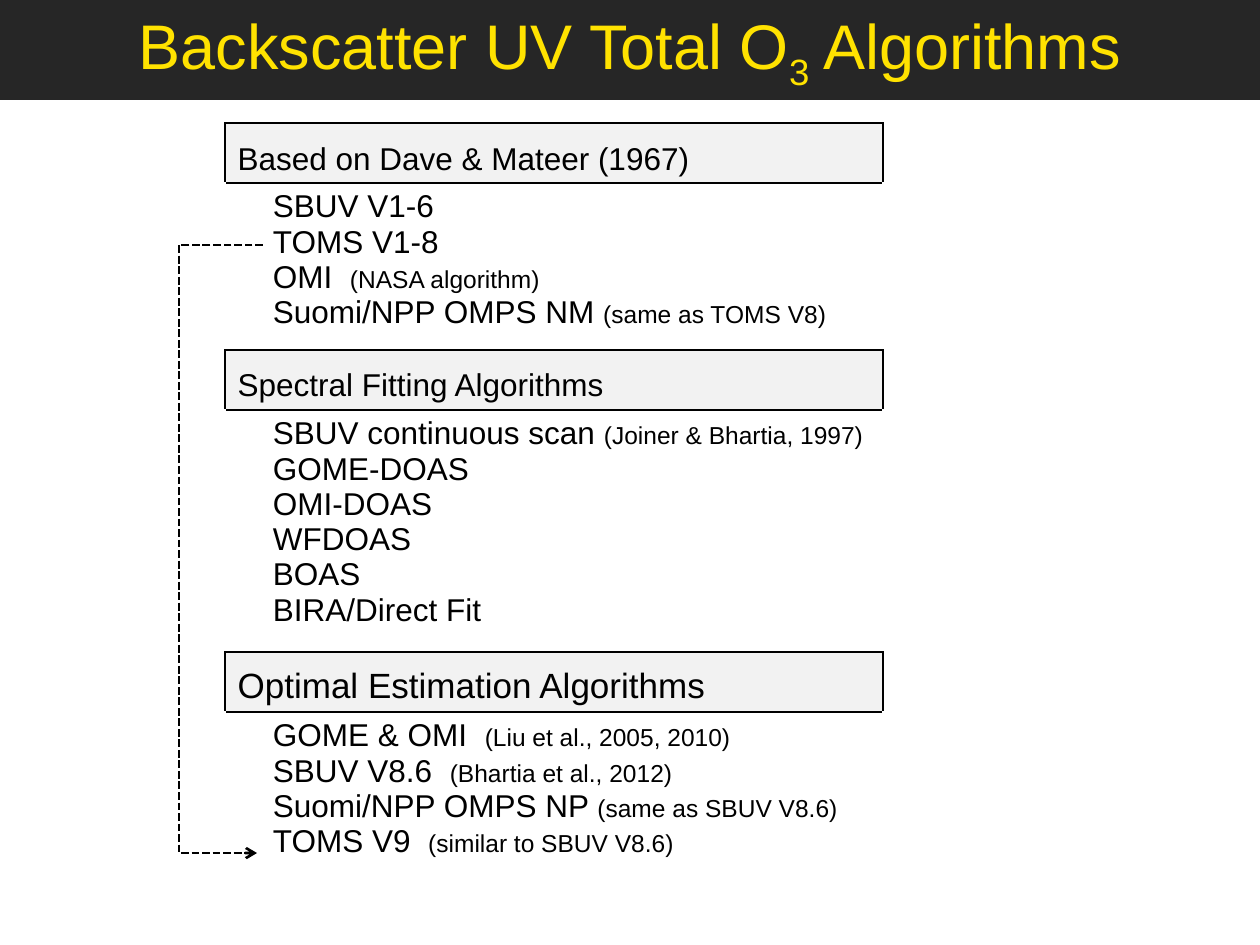
from pptx import Presentation
from pptx import util as u
from pptx.dml.color import RGBColor
from pptx.enum import dml, shapes, text
from pptx.oxml.ns import qn
from lxml import etree

BLACK, YELLOW, CHARCOAL, PALE = "000000", "FFE200", "262626", "F2F2F2"


def px(n):
    return u.Emu(round(n * 914400 / 126))


def rgb(value):
    return RGBColor.from_string(value)


class Deck:
    font = "Arial"
    note_size = 14

    def __init__(self, width, height):
        self.prs = Presentation()
        self.prs.slide_width, self.prs.slide_height = px(width), px(height)
        self.slide = self.prs.slides.add_slide(self.prs.slide_layouts[5])

    def run(self, paragraph, words, size, color=BLACK):
        run = paragraph.add_run()
        run.text = words
        run.font.name = self.font
        run.font.size = u.Pt(size)
        run.font.bold = False
        run.font.color.rgb = rgb(color)
        return run

    def title(self, before, subscript, after, width, height):
        banner = self.slide.shapes.title
        banner.left, banner.top = px(0), px(0)
        banner.width, banner.height = px(width), px(height)
        banner.fill.solid()
        banner.fill.fore_color.rgb = rgb(CHARCOAL)
        frame = banner.text_frame
        frame.auto_size = text.MSO_AUTO_SIZE.NONE
        frame.vertical_anchor = text.MSO_ANCHOR.MIDDLE
        line = frame.paragraphs[0]
        line.alignment = text.PP_ALIGN.CENTER
        self.run(line, before, 36, YELLOW)
        lowered = self.run(line, subscript, 36, YELLOW)
        lowered.font._element.set("baseline", "-25000")
        self.run(line, after, 36, YELLOW)

    def border(self, cell, sides):
        properties = cell._tc.get_or_add_tcPr()
        for side in sides:
            edge = etree.SubElement(properties, qn(f"a:ln{side}"), w=str(u.Pt(1)))
            fill = etree.SubElement(edge, qn("a:solidFill"))
            etree.SubElement(fill, qn("a:srgbClr"), val=BLACK)

    def section(self, heading, heading_size, entries, top, body_height):
        """A boxed heading row above an open row of (name, note) entries."""
        left, width, heading_height = 225, 658, 60
        table = self.slide.shapes.add_table(
            2, 1, px(left), px(top), px(width), px(heading_height + body_height)).table
        table.first_row = table.horz_banding = False
        table.rows[0].height, table.rows[1].height = px(heading_height), px(body_height)

        head, body = table.cell(0, 0), table.cell(1, 0)
        self.border(head, "LRTB")
        head.fill.solid()
        head.fill.fore_color.rgb = rgb(PALE)
        head.vertical_anchor = text.MSO_ANCHOR.BOTTOM
        self.run(head.text_frame.paragraphs[0], heading, heading_size)

        self.border(body, "T")
        body.fill.background()
        body.margin_left = px(48)
        body.margin_right = px(0)
        frame = body.text_frame
        for i, (name, note) in enumerate(entries):
            line = frame.add_paragraph() if i else frame.paragraphs[0]
            self.run(line, name, 18)
            if note:
                self.run(line, note, self.note_size)

    def dashed_elbow(self, start, end, bend_x):
        """An arrow that runs out to bend_x and back in to its end."""
        link = self.slide.shapes.add_connector(
            shapes.MSO_CONNECTOR.ELBOW, px(start[0]), px(start[1]), px(end[0]), px(end[1]))
        link.line.color.rgb = rgb(BLACK)
        link.line.width = u.Pt(1.5)
        link.line.dash_style = dml.MSO_LINE.SQUARE_DOT
        properties = link._element.spPr
        etree.SubElement(properties.find(qn("a:ln")), qn("a:tailEnd"), type="arrow")
        etree.SubElement(properties, qn("a:effectLst"))
        bend = round(100000 * (bend_x - start[0]) / (end[0] - start[0]))
        guides = properties.find(qn("a:prstGeom")).get_or_add_avLst()
        etree.SubElement(guides, qn("a:gd"), name="adj1", fmla=f"val {bend}")


# Heading, heading size, top, body height, entries
SECTIONS = [
    ("Based on Dave & Mateer (1967)", 18, 123, 185, [
        ("SBUV V1-6", ""),
        ("TOMS V1-8", ""),
        ("OMI  ", "(NASA algorithm)"),
        ("Suomi/NPP OMPS NM ", "(same as TOMS V8)")]),
    ("Spectral Fitting Algorithms", 18, 350, 240, [
        ("SBUV continuous scan ", "(Joiner & Bhartia, 1997)"),
        ("GOME-DOAS", ""),
        ("OMI-DOAS", ""),
        ("WFDOAS", ""),
        ("BOAS", ""),
        ("BIRA/Direct Fit", "")]),
    ("Optimal Estimation Algorithms", 20, 652, 188, [
        ("GOME & OMI  ", "(Liu et al., 2005, 2010)"),
        ("SBUV V8.6  ", "(Bhartia et al., 2012)"),
        ("Suomi/NPP OMPS NP ", "(same as SBUV V8.6)"),
        ("TOMS V9  ", "(similar to SBUV V8.6)")]),
]


def main():
    deck = Deck(1260, 945)
    deck.title("Backscatter UV Total O", "3", " Algorithms", 1260, 100)
    for heading, size, top, body_height, entries in SECTIONS:
        deck.section(heading, size, entries, top, body_height)
    # TOMS V1-8 leads on to TOMS V9
    deck.dashed_elbow((263, 245), (257, 853), 179)
    deck.prs.save("out.pptx")


if __name__ == "__main__":
    main()
